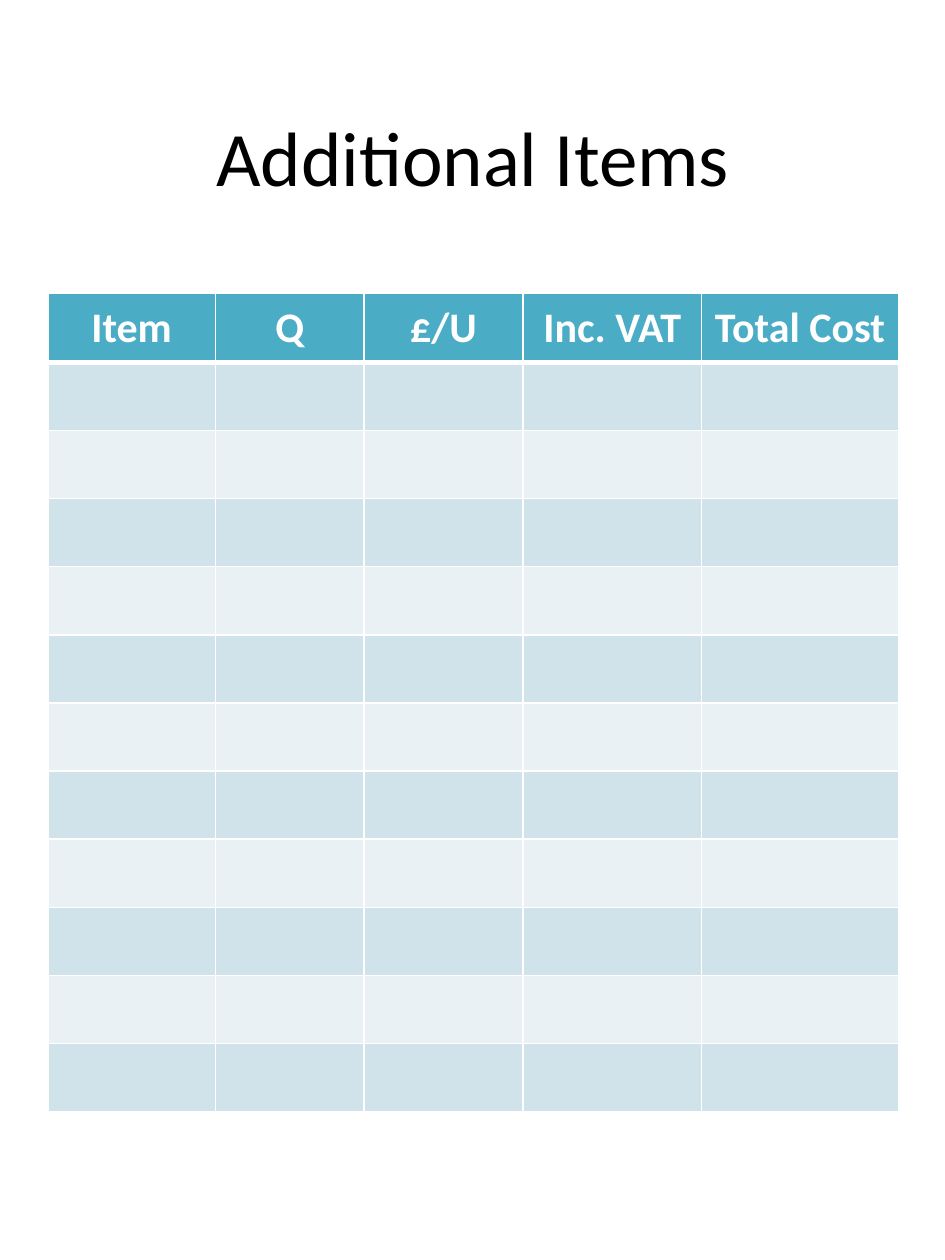
from lxml import etree
from pptx import Presentation
from pptx.dml.color import RGBColor
from pptx.enum.text import MSO_ANCHOR, PP_ALIGN
from pptx.oxml.ns import qn
from pptx.util import Inches, Pt

# Content
TITLE = "Additional Items"
COLUMNS = [("Item", 1.33), ("Q", 1.18), ("£/U", 1.26), ("Inc. VAT", 1.42), ("Total Cost", 1.56)]
BLANK_ROWS = 11

# Format
FONT = "Calibri"
BLACK = RGBColor(0x00, 0x00, 0x00)
WHITE = RGBColor(0xFF, 0xFF, 0xFF)
TEAL = RGBColor(0x4B, 0xAC, 0xC6)
BANDS = [RGBColor(0xD0, 0xE3, 0xEA), RGBColor(0xE9, 0xF1, 0xF5)]
LEFT, WIDTH = 0.38, 6.75
TABLE_TOP, TABLE_HEIGHT = 2.33, 6.49
CELL_MARGIN = 0.07
THIN, THICK = 1, 3


def write(frame, text, *, size, color, bold=False):
    paragraph = frame.paragraphs[0]
    paragraph.alignment = PP_ALIGN.CENTER
    run = paragraph.add_run()
    run.text = text
    run.font.name = FONT
    run.font.size = Pt(size)
    run.font.bold = bold
    run.font.color.rgb = color


def set_borders(cell, *, top=THIN, bottom=THIN):
    properties = cell._tc.get_or_add_tcPr()
    for side, width in (("L", THIN), ("R", THIN), ("T", top), ("B", bottom)):
        line = etree.SubElement(properties, qn(f"a:ln{side}"), w=str(Pt(width)))
        fill = etree.SubElement(line, qn("a:solidFill"))
        etree.SubElement(fill, qn("a:srgbClr"), val=str(WHITE))


def set_fill(cell, color):
    cell.fill.solid()
    cell.fill.fore_color.rgb = color


prs = Presentation()
prs.slide_width, prs.slide_height = Inches(7.5), Inches(10)
slide = prs.slides.add_slide(prs.slide_layouts[5])

# Title
title = slide.shapes.title
title.left, title.top = Inches(LEFT), Inches(0.4)
title.width, title.height = Inches(WIDTH), Inches(1.67)
title.text_frame.vertical_anchor = MSO_ANCHOR.MIDDLE
write(title.text_frame, TITLE, size=44, color=BLACK)

# Table grid
items = slide.shapes.add_table(
    BLANK_ROWS + 1, len(COLUMNS),
    Inches(LEFT), Inches(TABLE_TOP), Inches(WIDTH), Inches(TABLE_HEIGHT),
).table
for row in items.rows:
    row.height = Inches(TABLE_HEIGHT / (BLANK_ROWS + 1))

for col, (heading, width) in enumerate(COLUMNS):
    items.columns[col].width = Inches(width)

    # Heading cell
    header = items.cell(0, col)
    header.margin_left = header.margin_right = Inches(CELL_MARGIN)
    header.margin_top = header.margin_bottom = Inches(CELL_MARGIN)
    set_borders(header, bottom=THICK)
    set_fill(header, TEAL)
    write(header.text_frame, heading, size=24, color=WHITE, bold=True)

    # Blank banded cells
    for row in range(1, BLANK_ROWS + 1):
        cell = items.cell(row, col)
        set_borders(cell, top=THICK if row == 1 else THIN)
        set_fill(cell, BANDS[(row - 1) % 2])

prs.save("out.pptx")
